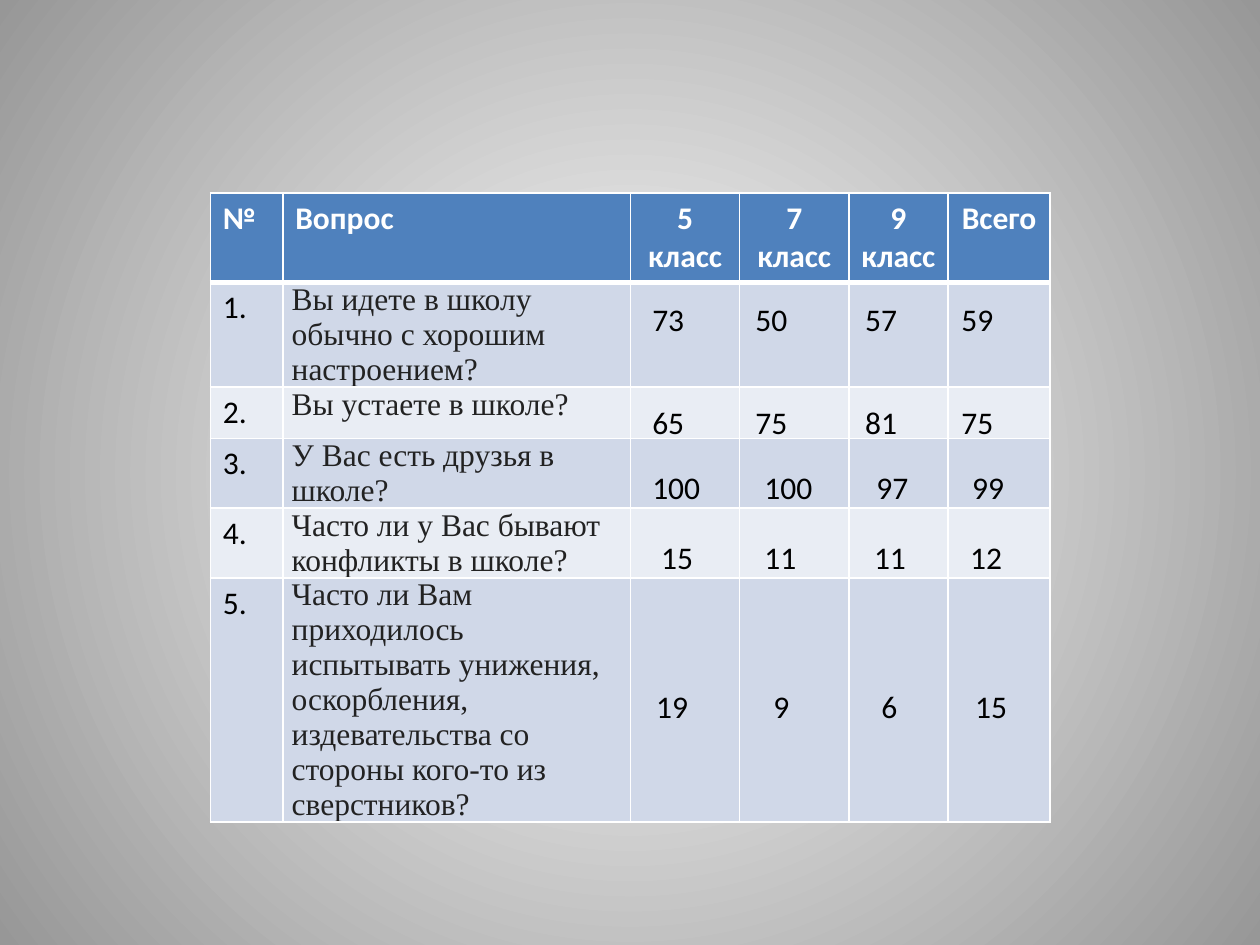
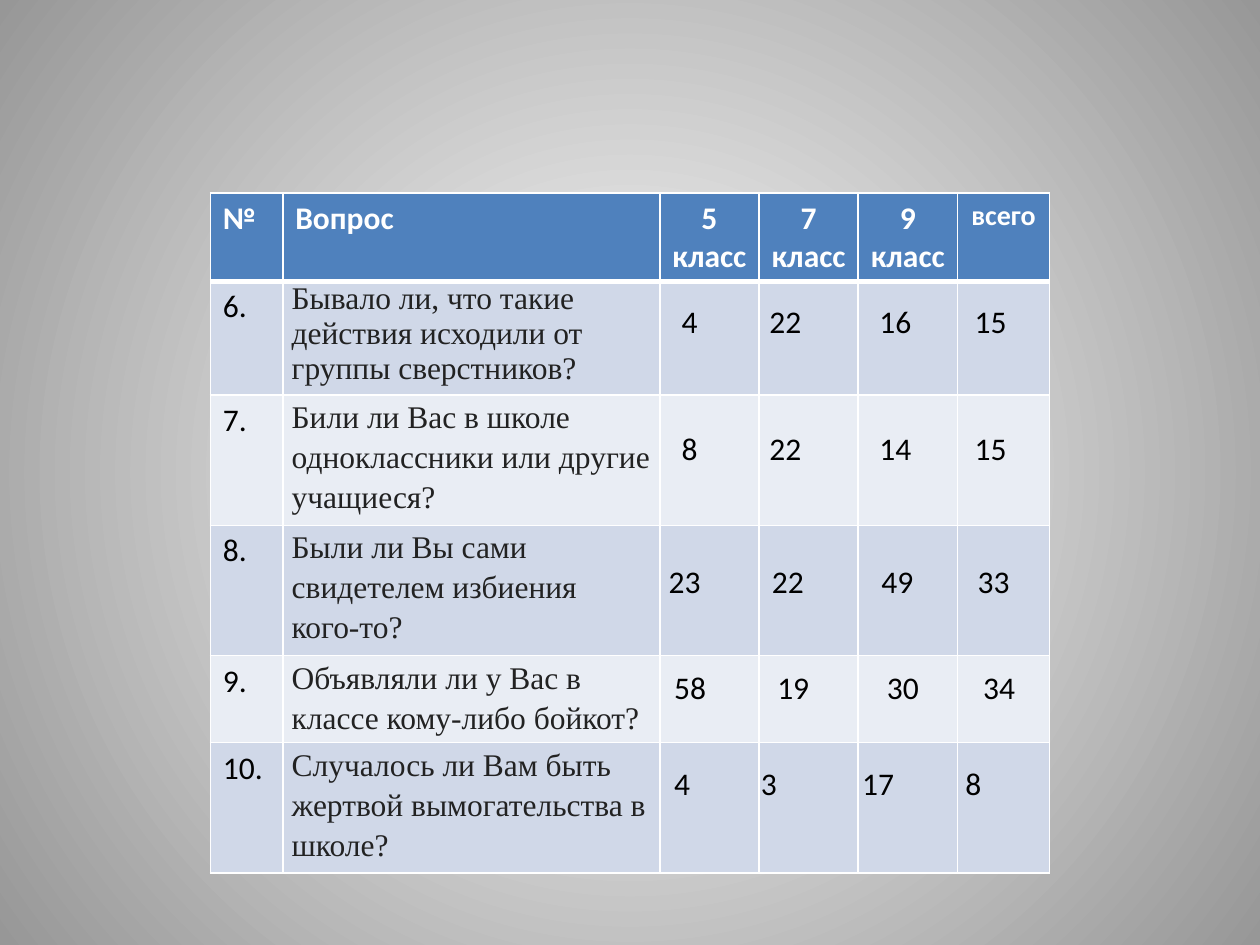
from dataclasses import dataclass

from pptx import Presentation
from pptx.dml.color import RGBColor
from pptx.enum.text import PP_ALIGN
from pptx.oxml import parse_xml
from pptx.oxml.ns import nsdecls, qn
from pptx.util import Cm, Pt

CENTER, LEFT = PP_ALIGN.CENTER, PP_ALIGN.LEFT


@dataclass(frozen=True)
class Theme:
    white: str = "FFFFFF"
    edge: str = "979797"
    header: str = "4F81BD"
    bands: tuple = ("D0D8E8", "E9EDF4")
    ink: str = "000000"
    question: str = "222222"
    sans: str = "Calibri"
    serif: str = "Times New Roman"
    size: int = 18
    small: int = 16
    thin: int = 1
    thick: int = 3


T = Theme()
TABLE_AT = (4.24, 3.89)

# Tab stops of the value lines, in cm from the first value
WIDE = (2.08, 4.29, 6.23)
WIDER = (2.26, 4.52, 6.45)
WIDEST = (2.36, 4.54, 6.43)
NARROW = (1.77, 3.99, 5.91)
UNEVEN = (1.75, 3.79, 5.87)


@dataclass(frozen=True)
class Question:
    text: str
    height: float
    values: tuple
    at: tuple  # left and top of the value line, relative to the table
    tabs: tuple = WIDE
    spacing: float = 1.0


@dataclass(frozen=True)
class Survey:
    first_number: int
    total_label: str
    total_size: int
    header_height: float
    widths: tuple
    questions: tuple


SURVEYS = (
    Survey(1, "Всего", T.size, 1.78, (1.46, 7.01, 2.2, 2.2, 2.0, 2.06), (
        Question("Вы идете в школу обычно с хорошим настроением?",
                 2.1, (73, 50, 57, 59), (8.66, 2.03)),
        Question("Вы устаете в школе?",
                 1.03, (65, 75, 81, 75), (8.66, 4.11)),
        Question("У Вас есть друзья в школе?",
                 1.4, (100, 100, 97, 99), (8.66, 5.43), WIDER),
        Question("Часто ли у Вас бывают конфликты в школе?",
                 1.4, (15, 11, 11, 12), (8.84, 6.83)),
        Question("Часто ли Вам приходилось испытывать унижения, оскорбления, "
                 "издевательства со стороны кого-то из сверстников?",
                 4.92, (19, 9, 6, 15), (8.74, 9.83), WIDEST),
    )),
    Survey(6, "всего", T.small, 1.76, (1.46, 7.6, 2.0, 2.0, 2.0, 1.86), (
        Question("Бывало ли, что такие действия исходили от группы сверстников?",
                 2.29, (4, 22, 16, 15), (9.25, 2.08), NARROW),
        Question("Били ли Вас в школе одноклассники или другие учащиеся?",
                 2.63, (8, 22, 14, 15), (9.25, 4.64), NARROW, 1.15),
        Question("Были ли Вы сами свидетелем избиения кого-то?",
                 2.63, (23, 22, 49, 33), (8.99, 7.31), WIDE, 1.15),
        Question("Объявляли ли у Вас в классе кому-либо бойкот?",
                 1.75, (58, 19, 30, 34), (9.1, 9.45), WIDE, 1.15),
        Question("Случалось ли Вам быть жертвой вымогательства в школе?",
                 2.63, (4, 3, 17, 8), (9.1, 11.38), UNEVEN, 1.15),
    )),
)


def set_background(master):
    """Radial grey gradient shared by all slides."""
    master.background.fill.solid()
    bg = master.element.find(".//" + qn("p:bgPr"))
    bg.replace(bg[0], parse_xml(
        f'<a:gradFill {nsdecls("a")} rotWithShape="1"><a:gsLst>'
        f'<a:gs pos="0"><a:srgbClr val="{T.white}"/></a:gs>'
        f'<a:gs pos="100000"><a:srgbClr val="{T.edge}"/></a:gs></a:gsLst>'
        '<a:path path="circle"><a:fillToRect l="50000" t="50000" r="50000" b="50000"/>'
        '</a:path></a:gradFill>'))


def add_run(p, text, color=T.ink, font=T.sans, size=T.size, bold=False):
    r = p.add_run()
    r.text = text
    r.font.name, r.font.size, r.font.bold = font, Pt(size), bold
    r.font.color.rgb = RGBColor.from_string(color)


def style_cell(cell, fill, top=T.thin, bottom=T.thin):
    """White borders, then the fill."""
    tc_pr = cell._tc.get_or_add_tcPr()
    for side, width in (("L", T.thin), ("R", T.thin), ("T", top), ("B", bottom)):
        tc_pr.append(parse_xml(
            f'<a:ln{side} {nsdecls("a")} w="{Pt(width)}"><a:solidFill>'
            f'<a:srgbClr val="{T.white}"/></a:solidFill></a:ln{side}>'))
    cell.fill.solid()
    cell.fill.fore_color.rgb = RGBColor.from_string(fill)


def add_survey_table(s, survey, left, top):
    heights = (survey.header_height, *(q.height for q in survey.questions))
    tbl = s.shapes.add_table(len(heights), len(survey.widths), Cm(left), Cm(top),
                             Cm(sum(survey.widths)), Cm(sum(heights))).table
    for col, width in zip(tbl.columns, survey.widths):
        col.width = Cm(width)
    for row, height in zip(tbl.rows, heights):
        row.height = Cm(height)

    # Header row
    labels = ("№", "Вопрос", "5 класс", "7 класс", "9 класс", survey.total_label)
    for i, label in enumerate(labels):
        cell = tbl.cell(0, i)
        style_cell(cell, T.header, bottom=T.thick)
        p = cell.text_frame.paragraphs[0]
        p.alignment = CENTER if i > 1 else LEFT
        size = survey.total_size if i == len(labels) - 1 else T.size
        add_run(p, label, T.white, size=size, bold=True)

    # Banded question rows
    for i, q in enumerate(survey.questions):
        cells = tbl.rows[i + 1].cells
        for cell in cells:
            style_cell(cell, T.bands[i % 2], top=T.thin if i else T.thick)
            cell.text_frame.paragraphs[0].font.size = Pt(T.size)
        number, question = cells[0], cells[1]
        add_run(number.text_frame.paragraphs[0], f"{survey.first_number + i}.")
        question.margin_left = question.margin_right = Cm(0.18)
        question.margin_top = question.margin_bottom = 0
        p = question.text_frame.paragraphs[0]
        p.line_spacing = q.spacing
        add_run(p, q.text, T.question, T.serif)


def add_value_line(s, q, left, top):
    """Four values of one question, aligned by tab stops."""
    x, y = q.at
    tf = s.shapes.add_textbox(Cm(left + x), Cm(top + y),
                              Cm(q.tabs[-1] + 1.42), Cm(1.02)).text_frame
    tf.word_wrap = True
    p = tf.paragraphs[0]
    stops = "".join(f'<a:tab pos="{Cm(t)}" algn="l"/>' for t in q.tabs)
    p._p.get_or_add_pPr().append(
        parse_xml(f'<a:tabLst {nsdecls("a")}>{stops}</a:tabLst>'))
    add_run(p, "\t".join(map(str, q.values)))


def add_survey_slide(prs, survey):
    s = prs.slides.add_slide(prs.slide_layouts[6])
    add_survey_table(s, survey, *TABLE_AT)
    for q in survey.questions:
        add_value_line(s, q, *TABLE_AT)


def main():
    prs = Presentation()
    prs.slide_width, prs.slide_height = Cm(25.4), Cm(19.05)
    set_background(prs.slide_master)
    for survey in SURVEYS:
        add_survey_slide(prs, survey)
    prs.save("out.pptx")


if __name__ == "__main__":
    main()
